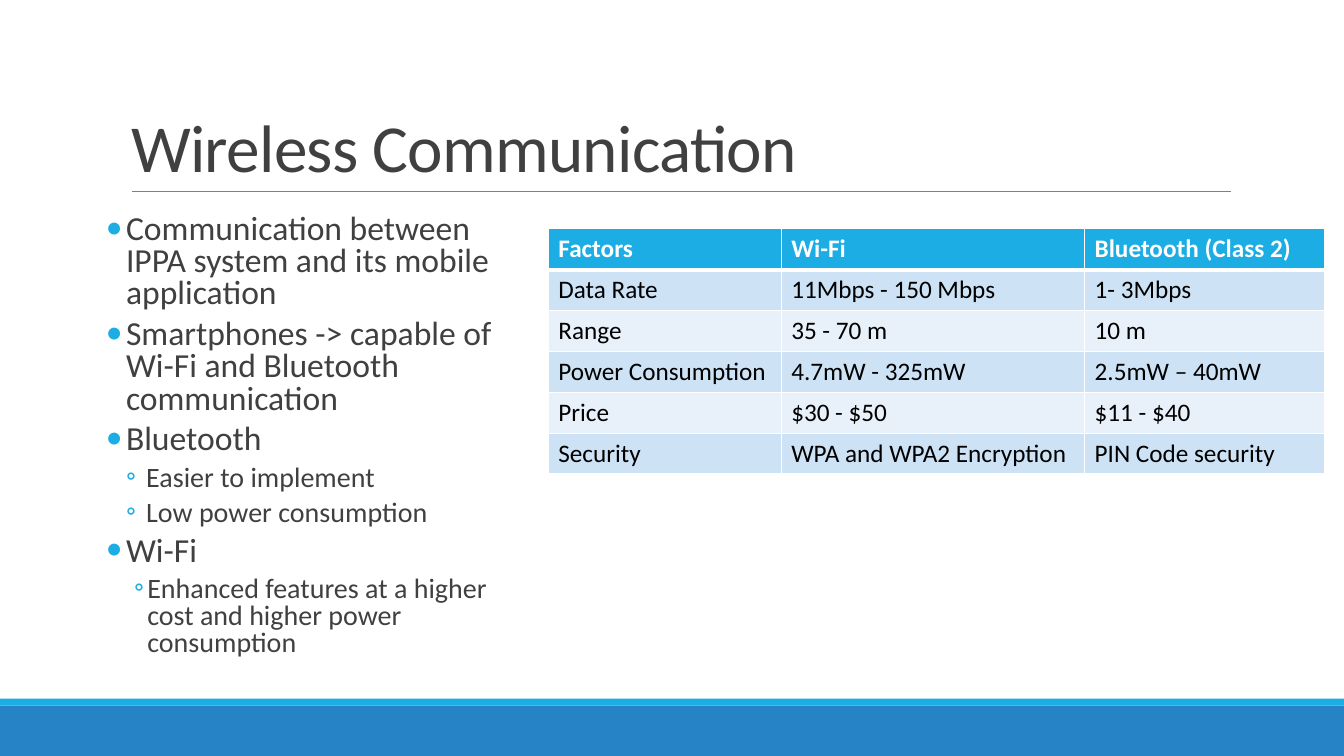
from dataclasses import dataclass

from lxml import etree
from pptx import Presentation
from pptx.dml.color import RGBColor
from pptx.enum.shapes import MSO_CONNECTOR, MSO_SHAPE
from pptx.enum.text import MSO_ANCHOR, MSO_AUTO_SIZE, PP_ALIGN
from pptx.oxml.ns import qn
from pptx.util import Inches, Pt

RECT, LINE = MSO_SHAPE.RECTANGLE, MSO_CONNECTOR.STRAIGHT
LEFT, TOP, BOTTOM = PP_ALIGN.LEFT, MSO_ANCHOR.TOP, MSO_ANCHOR.BOTTOM
NO_FIT = MSO_AUTO_SIZE.NONE
WIDE, HIGH = Inches(13.333), Inches(7.5)


@dataclass(frozen=True)
class Theme:
    font: str = "Calibri"
    ink: str = "404040"
    rule: str = "808080"
    accent: str = "1CADE4"
    base: str = "2683C6"
    white: str = "FFFFFF"
    black: str = "000000"
    bands: tuple = ("E8F1FA", "CDE3F5")
    title: int = 48
    main: int = 24
    sub: int = 20
    cell: int = 18


@dataclass(frozen=True)
class Band:
    top: float
    tall: float
    color: str


@dataclass(frozen=True)
class Level:
    mark: str
    size: int
    left: float
    hang: float
    depth: int


@dataclass(frozen=True)
class Point:
    text: str
    level: Level


THEME = Theme()
MAIN = Level("•", THEME.main, 3.15, 1.5, 0)
SUB = Level("◦", THEME.sub, 4.65, 1.5, 1)
TIGHT = Level("◦", THEME.sub, 4.73, 0.98, 0)

BANDS = (Band(93.33, 6.67, THEME.base), Band(92.4, 0.93, THEME.accent))
POINTS = (
    Point("Communication between IPPA system and its mobile application", MAIN),
    Point("Smartphones -> capable of Wi-Fi and Bluetooth communication", MAIN),
    Point("Bluetooth", MAIN),
    Point("Easier to implement", SUB),
    Point("Low power consumption", SUB),
    Point("Wi-Fi", MAIN),
    Point("Enhanced features at a higher cost and higher power consumption", TIGHT),
)
ROWS = (
    ("Factors", "Wi-Fi", "Bluetooth (Class 2)"),
    ("Data Rate", "11Mbps - 150 Mbps", "1- 3Mbps"),
    ("Range", "35 - 70 m", "10 m"),
    ("Power Consumption", "4.7mW - 325mW", "2.5mW – 40mW"),
    ("Price", "$30 - $50", "$11 - $40"),
    ("Security", "WPA and WPA2 Encryption", "PIN Code security"),
)
COLS, ROW = (17.33, 22.58, 17.85), 5.4


def across(share: float) -> int:
    """Percent of the slide's width."""
    return round(WIDE * share / 100)


def down(share: float) -> int:
    """Percent of the slide's height."""
    return round(HIGH * share / 100)


def place(left: float, top: float, wide: float, tall: float) -> tuple:
    return across(left), down(top), across(wide), down(tall)


def assign(item, values: dict) -> None:
    for name, value in values.items():
        setattr(item, name, value)


def style(run, size: int, color: str, bold: bool = False) -> None:
    assign(run.font, {"name": THEME.font, "size": Pt(size), "bold": bold})
    run.font.color.rgb = RGBColor.from_string(color)


def add_band(slide, band: Band) -> None:
    shape = slide.shapes.add_shape(RECT, *place(0, band.top, 100, band.tall))
    shape.shadow.inherit = False
    shape.fill.solid()
    shape.fill.fore_color.rgb = RGBColor.from_string(band.color)
    shape.line.fill.background()


def add_rule(slide) -> None:
    y = down(25.33)
    rule = slide.shapes.add_connector(LINE, across(9.82), y, across(91.58), y)
    rule.line.width = Pt(0.5)
    rule.line.color.rgb = RGBColor.from_string(THEME.rule)
    etree.SubElement(rule._element.spPr, qn("a:effectLst"))


def set_title(slide, text: str) -> None:
    title = slide.shapes.title
    spots = place(9, 4.13, 82.5, 21.2)
    assign(title, dict(zip(("left", "top", "width", "height"), spots)))
    frame = title.text_frame
    assign(frame, {"auto_size": NO_FIT, "word_wrap": True,
                   "vertical_anchor": BOTTOM})
    para = frame.paragraphs[0]
    assign(para, {"alignment": LEFT, "line_spacing": 0.85})
    run = para.add_run()
    run.text = text
    style(run, THEME.title, THEME.ink)
    run.font._element.set("spc", "-50")


def add_mark(para, level: Level) -> None:
    props = para._p.get_or_add_pPr()
    props.set("marL", str(across(level.left)))
    props.set("indent", str(-across(level.hang)))
    tint = etree.SubElement(props, qn("a:buClr"))
    etree.SubElement(tint, qn("a:srgbClr"), val=THEME.accent)
    etree.SubElement(props, qn("a:buFont"), typeface=THEME.font)
    etree.SubElement(props, qn("a:buChar"), char=level.mark)


def add_points(slide, points: tuple) -> None:
    frame = slide.shapes.add_textbox(*place(6.23, 27.73, 32.18, 61.07)).text_frame
    assign(frame, {"word_wrap": True, "auto_size": NO_FIT,
                   "vertical_anchor": TOP, "margin_left": 0, "margin_right": 0})
    for i, point in enumerate(points):
        para = frame.add_paragraph() if i else frame.paragraphs[0]
        assign(para, {"level": point.level.depth, "alignment": LEFT,
                      "line_spacing": 0.8, "space_before": Pt(2),
                      "space_after": Pt(4)})
        add_mark(para, point.level)
        run = para.add_run()
        run.text = point.text
        style(run, point.level.size, THEME.ink)


def add_edges(cell, top: int, low: int) -> None:
    props = cell._tc.get_or_add_tcPr()
    widths = {"a:lnL": 1, "a:lnR": 1, "a:lnT": top, "a:lnB": low}
    for i, (tag, width) in enumerate(widths.items()):
        edge = etree.Element(qn(tag), w=str(Pt(width)))
        fill = etree.SubElement(edge, qn("a:solidFill"))
        etree.SubElement(fill, qn("a:srgbClr"), val=THEME.white)
        props.insert(i, edge)


def add_grid(slide, rows: tuple) -> None:
    spot = place(40.8, 30.27, sum(COLS), ROW * len(rows))
    table = slide.shapes.add_table(len(rows), len(COLS), *spot).table
    for col, share in zip(table.columns, COLS):
        col.width = across(share)
    for r, texts in enumerate(rows):
        table.rows[r].height = down(ROW)
        head = r == 0
        back = THEME.accent if head else THEME.bands[r % 2]
        for c, text in enumerate(texts):
            cell = table.cell(r, c)
            cell.fill.solid()
            cell.fill.fore_color.rgb = RGBColor.from_string(back)
            add_edges(cell, 3 if r == 1 else 1, 3 if head else 1)
            run = cell.text_frame.paragraphs[0].add_run()
            run.text = text
            style(run, THEME.cell, THEME.white if head else THEME.black, head)


def main() -> None:
    deck = Presentation()
    assign(deck, {"slide_width": WIDE, "slide_height": HIGH})
    slide = deck.slides.add_slide(deck.slide_layouts[5])

    # Footer bands and title rule
    for band in BANDS:
        add_band(slide, band)
    add_rule(slide)

    # Title, bullet list and comparison table
    set_title(slide, "Wireless Communication")
    add_points(slide, POINTS)
    add_grid(slide, ROWS)
    deck.save("out.pptx")


if __name__ == "__main__":
    main()
